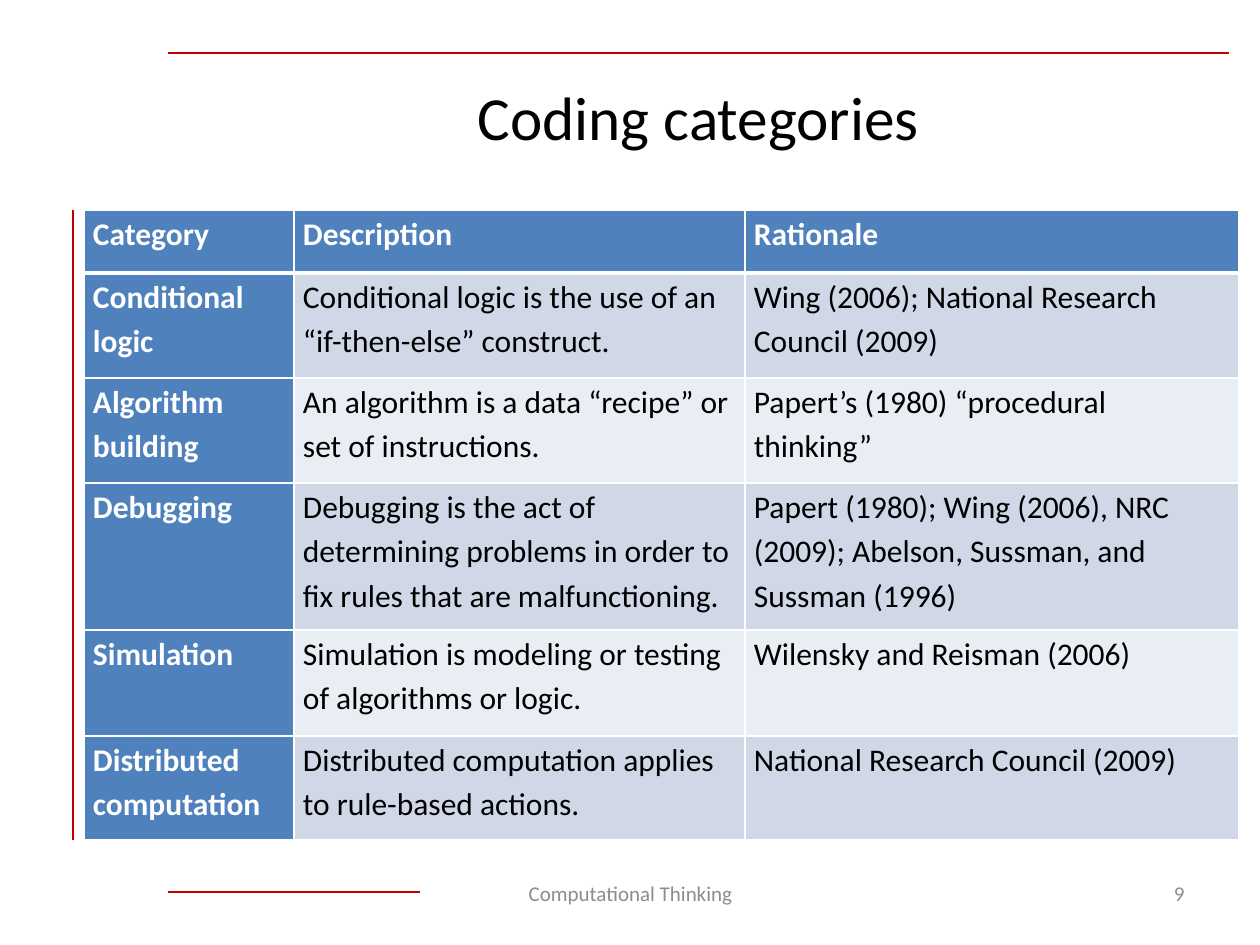
from lxml import etree
from pptx import Presentation, util as u
from pptx.dml.color import RGBColor
from pptx.enum import shapes, text
from pptx.oxml import ns

PX = 914400 / 126
FONT = "Calibri"
HUES = {
    "rule": "C00000", "head": "4F81BD", "odd": "D0D8E8", "even": "E9EDF4",
    "white": "FFFFFF", "black": "000000", "gray": "8C8C8C",
}
ROWS = [
    ("Category", "Description", "Rationale"),
    ("Conditional logic",
     "Conditional logic is the use of an “if-then-else” construct.",
     "Wing (2006); National Research Council (2009)"),
    ("Algorithm building",
     "An algorithm is a data “recipe” or set of instructions.",
     "Papert’s (1980) “procedural\nthinking”"),
    ("Debugging",
     "Debugging is the act of determining problems in order to fix rules "
     "that are malfunctioning.",
     "Papert (1980); Wing (2006), NRC (2009); Abelson, Sussman, and "
     "Sussman (1996)"),
    ("Simulation",
     "Simulation is modeling or testing of algorithms or logic.",
     "Wilensky and Reisman (2006)"),
    ("Distributed computation",
     "Distributed computation applies to rule-based actions.",
     "National Research Council (2009)"),
]
WIDTHS = [210, 451, 494]
HEIGHTS = [63, 105, 105, 147, 106, 104]
RULES = [(73, 210, 73, 840), (168, 53, 1229, 53), (420, 892, 168, 892)]
ALIGN = text.PP_ALIGN
LABELS = [
    ("Coding categories", (168, 63, 1061, 105), 35, "black", ALIGN.CENTER),
    ("Computational Thinking", (431, 868, 399, 50), 12, "gray", ALIGN.CENTER),
    ("9", (903, 868, 294, 50), 12, "gray", ALIGN.RIGHT),
]


def emu(*vals):
    return [u.Emu(round(v * PX)) for v in vals]


def hue(name):
    return RGBColor.from_string(HUES[name])


def style(run, size, color, bold=False):
    font = run.font
    font.name, font.size, font.bold = FONT, u.Pt(size), bold
    font.color.rgb = hue(color)


def add_rule(slide, ends):
    line = slide.shapes.add_connector(shapes.MSO_CONNECTOR.STRAIGHT, *emu(*ends))
    line.line.color.rgb = hue("rule")
    line.line.width = u.Pt(1.5)
    etree.SubElement(line._element.spPr, ns.qn("a:effectLst"))


def add_label(slide, words, box, size, color, align):
    frame = slide.shapes.add_textbox(*emu(*box)).text_frame
    frame.word_wrap = True
    frame.vertical_anchor = text.MSO_ANCHOR.MIDDLE
    frame.text = words
    para = frame.paragraphs[0]
    para.alignment = align
    style(para.runs[0], size, color)


def add_edges(cell, row):
    """Draw white cell borders, heavy between the header and the body."""
    props = cell._tc.get_or_add_tcPr()
    for side in "LRTB":
        heavy = (row, side) in [(0, "B"), (1, "T")]
        edge = etree.SubElement(props, ns.qn("a:ln" + side),
                                w=str(u.Pt(3 if heavy else 1)))
        fill = etree.SubElement(edge, ns.qn("a:solidFill"))
        etree.SubElement(fill, ns.qn("a:srgbClr"), val=HUES["white"])


def fill_cell(cell, words, row, col):
    head = row == 0 or col == 0
    add_edges(cell, row)
    cell.fill.solid()
    cell.fill.fore_color.rgb = hue("head" if head else "odd" if row % 2 else "even")
    cell.margin_left, cell.margin_right = emu(9, 9)
    cell.margin_top = cell.margin_bottom = 0
    cell.text_frame.text = words
    for para in cell.text_frame.paragraphs:
        para.line_spacing = 1.15
        style(para.runs[0], 18, "white" if head else "black", head)


def add_grid(slide):
    box = emu(84, 210, sum(WIDTHS), sum(HEIGHTS))
    table = slide.shapes.add_table(len(ROWS), len(WIDTHS), *box).table
    table.horz_banding = False
    for col, width in zip(table.columns, emu(*WIDTHS)):
        col.width = width
    for row, height in zip(table.rows, emu(*HEIGHTS)):
        row.height = height
    for r, row in enumerate(ROWS):
        for c, words in enumerate(row):
            fill_cell(table.cell(r, c), words, r, c)


def main():
    deck = Presentation()
    deck.slide_width, deck.slide_height = emu(1260, 945)
    slide = deck.slides.add_slide(deck.slide_layouts[6])
    for ends in RULES:
        add_rule(slide, ends)
    add_grid(slide)
    for label in LABELS:
        add_label(slide, *label)
    deck.save("out.pptx")


if __name__ == "__main__":
    main()
